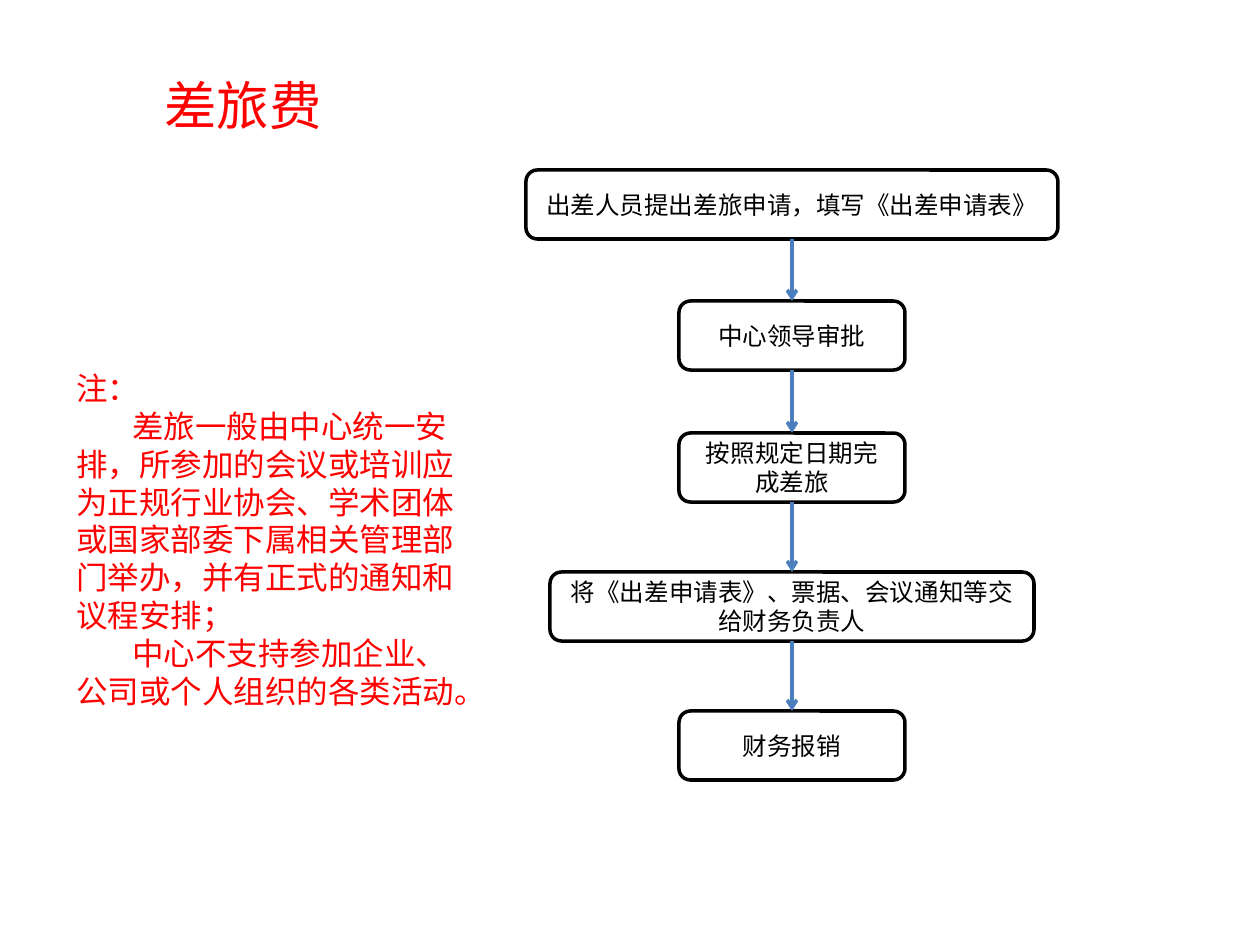
import pptx
import pptx.dml.color
import pptx.enum.shapes
import pptx.enum.text
import pptx.oxml
import pptx.oxml.ns
import pptx.util

EMU_PER_PX = 914400 / 126
RED, BLACK, BLUE = "FF0000", "000000", "4B7EBC"
STEP_HEIGHT = 69
STEPS = [
    ("出差人员提出差旅申请，填写《出差申请表》", 532, 0),
    ("中心领导审批", 226, 131),
    ("按照规定日期完成差旅", 226, 263),
    ("将《出差申请表》、票据、会议通知等交给财务负责人", 484, 402),
    ("财务报销", 226, 541),
]
NOTES = [
    ("注：", 0),
    ("差旅一般由中心统一安排，所参加的会议或培训应为正规行业协会、学术团体或国家部委下属相关管理部门举办，并有正式的通知和议程安排；", 56),
    ("中心不支持参加企业、公司或个人组织的各类活动。", 56),
]


def px(*lengths):
    """Turn pixel lengths into a list of EMU."""
    return [pptx.util.Emu(round(length * EMU_PER_PX)) for length in lengths]


def rgb(value):
    """Turn a hex string into a colour."""
    return pptx.dml.color.RGBColor.from_string(value)


def apply(target, formats):
    """Set every attribute in a dict of format values."""
    for name, value in formats.items():
        setattr(target, name, value)


def write(paragraph, text, size, color, font="Calibri"):
    """Put one formatted run into a paragraph."""
    run = paragraph.add_run()
    run.text = text
    apply(run.font, {"size": pptx.util.Pt(size), "name": font})
    run.font.color.rgb = rgb(color)
    properties = run.font._element
    east_asian = properties.makeelement(
        pptx.oxml.ns.qn("a:ea"), {"typeface": "Noto Sans CJK JP"})
    properties.find(pptx.oxml.ns.qn("a:latin")).addnext(east_asian)


def add_title(slide, box):
    """Place the centred slide title in its box."""
    shape = slide.shapes.add_textbox(*px(*box))
    apply(shape.text_frame, {
        "word_wrap": True,
        "vertical_anchor": pptx.enum.text.MSO_ANCHOR.MIDDLE,
    })
    paragraph = shape.text_frame.paragraphs[0]
    paragraph.alignment = pptx.enum.text.PP_ALIGN.CENTER
    write(paragraph, "差旅费", 30, RED, "Noto Sans CJK JP")


def add_notes(slide, box):
    """Place the notes with indented first lines in their box."""
    frame = slide.shapes.add_textbox(*px(*box)).text_frame
    apply(frame, {
        "word_wrap": True,
        "auto_size": pptx.enum.text.MSO_AUTO_SIZE.SHAPE_TO_FIT_TEXT,
    })
    for index, (text, indent) in enumerate(NOTES):
        paragraph = frame.add_paragraph() if index else frame.paragraphs[0]
        paragraph._p.get_or_add_pPr().set("indent", str(px(indent)[0]))
        write(paragraph, text, 18, RED)


def add_step(slide, box, text):
    """Add one rounded step of the flow."""
    shape = slide.shapes.add_shape(
        pptx.enum.shapes.MSO_SHAPE.ROUNDED_RECTANGLE, *px(*box))
    shape.shadow.inherit = False
    shape.fill.background()
    shape.line.color.rgb = rgb(BLACK)
    shape.line.width = pptx.util.Pt(2)
    apply(shape.text_frame, {
        "word_wrap": True,
        "vertical_anchor": pptx.enum.text.MSO_ANCHOR.MIDDLE,
    })
    paragraph = shape.text_frame.paragraphs[0]
    paragraph.alignment = pptx.enum.text.PP_ALIGN.CENTER
    write(paragraph, text, 14, BLACK)
    return shape


def add_arrow(slide, upper, lower):
    """Join the bottom of one step to the top of the next."""
    arrow = slide.shapes.add_connector(
        pptx.enum.shapes.MSO_CONNECTOR.STRAIGHT, 0, 0, 0, 0)
    arrow.begin_connect(upper, 2)
    arrow.end_connect(lower, 0)
    arrow.line.color.rgb = rgb(BLUE)
    arrow.line.width = pptx.util.Pt(2)
    line = arrow.line._get_or_add_ln()
    line.append(line.makeelement(pptx.oxml.ns.qn("a:tailEnd"), {"type": "arrow"}))
    properties = arrow._element.spPr
    properties.append(properties.makeelement(pptx.oxml.ns.qn("a:effectLst"), {}))


def add_flow(slide, box):
    """Stack the steps on the centre line of the box and join them."""
    left, top, width, _ = box
    steps = [
        add_step(slide, (left + (width - step_width) // 2, top + offset,
                         step_width, STEP_HEIGHT), text)
        for text, step_width, offset in STEPS
    ]
    for upper, lower in zip(steps, steps[1:]):
        add_arrow(slide, upper, lower)


def main():
    """Build and save the travel expense slide."""
    presentation = pptx.Presentation()
    apply(presentation, {
        "slide_width": pptx.util.Inches(10),
        "slide_height": pptx.util.Inches(7.5),
    })
    slide = presentation.slides.add_slide(presentation.slide_layouts[6])
    add_title(slide, (25, 55, 436, 100))
    add_flow(slide, (526, 170, 532, 610))
    add_notes(slide, (64, 363, 407, 357))
    presentation.save("out.pptx")


if __name__ == "__main__":
    main()
